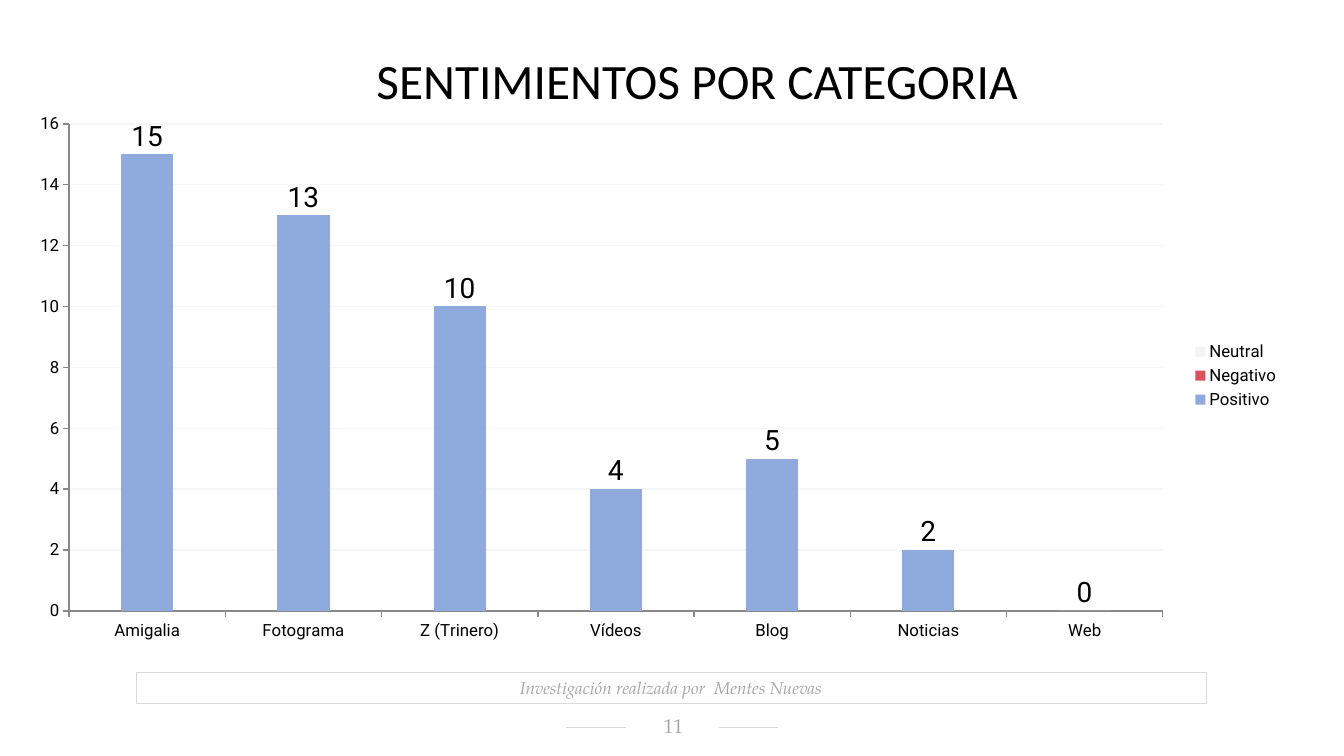
from dataclasses import dataclass

from lxml import etree
from pptx import Presentation
from pptx import util as u
from pptx.chart.data import CategoryChartData
from pptx.dml.color import RGBColor
from pptx.enum import chart as ch
from pptx.enum import shapes, text
from pptx.oxml.ns import qn

COLORS = {
    "black": "000000", "gray": "A6A6A6", "rule": "D9D9D9", "axis": "888888",
    "grid": "F4F6F8", "positive": "8FAADC", "negative": "D9525E", "neutral": "F4F4F4",
}
SERIF = "TeX Gyre Pagella"


@dataclass(frozen=True)
class Rule:
    left: float
    right: float
    y: float = 18.34


@dataclass(frozen=True)
class Sentiment:
    name: str
    values: tuple[int, ...]
    color: str


RULES = [Rule(14.27, 15.77), Rule(18.11, 19.61)]
CATEGORIES = ["Amigalia", "Fotograma", "Z (Trinero)", "Vídeos", "Blog", "Noticias", "Web"]
NO_MENTIONS = (0,) * len(CATEGORIES)
SENTIMENTS = [
    Sentiment("Positivo", (15, 13, 10, 4, 5, 2, 0), "positive"),
    Sentiment("Negativo", NO_MENTIONS, "negative"),
    Sentiment("Neutral", NO_MENTIONS, "neutral"),
]


def rgb(name: str) -> RGBColor:
    return RGBColor.from_string(COLORS[name])


def style_line(line, color: str, width: float) -> None:
    line.color.rgb = rgb(color)
    line.width = u.Pt(width)


def place(sp, left: float, top: float, width: float, height: float) -> None:
    sp.left, sp.top, sp.width, sp.height = map(u.Cm, (left, top, width, height))


def write(sp, content: str, *, size: float, font: str, color: str, italic: bool = False) -> None:
    tf = sp.text_frame
    tf.word_wrap = True
    tf.auto_size = text.MSO_AUTO_SIZE.NONE
    tf.vertical_anchor = text.MSO_ANCHOR.MIDDLE
    p = tf.paragraphs[0]
    p.alignment = text.PP_ALIGN.CENTER
    p.line_spacing = 1.0
    r = p.add_run()
    r.text = content
    r.font.size = u.Pt(size)
    r.font.name = font
    r.font.italic = italic
    r.font.color.rgb = rgb(color)


def draw_rule(slide, rule: Rule) -> None:
    line = slide.shapes.add_connector(
        shapes.MSO_CONNECTOR.STRAIGHT,
        u.Cm(rule.left), u.Cm(rule.y), u.Cm(rule.right), u.Cm(rule.y),
    )
    style_line(line.line, "rule", 0.5)
    etree.SubElement(line._element.spPr, qn("a:effectLst"))


def add_layout(parent, index: int, **settings: str | float) -> None:
    for old in parent.findall(qn("c:layout")):
        parent.remove(old)
    layout = etree.Element(qn("c:layout"))
    manual = etree.SubElement(layout, qn("c:manualLayout"))
    for tag, value in settings.items():
        etree.SubElement(manual, qn(f"c:{tag}")).set("val", str(value))
    parent.insert(index, layout)


def label_bars(series) -> None:
    for i in range(len(CATEGORIES)):
        label = series.points[i].data_label
        label.font.size = u.Pt(20)
        label.font.name = "Roboto"
        label.font.color.rgb = rgb("black")
        label.position = ch.XL_LABEL_POSITION.INSIDE_END
    for label in series._element.iter(qn("c:dLbl")):
        add_layout(label, 1, x=0, y=-0.07)


def draw_chart(slide) -> None:
    data = CategoryChartData(number_format="0")
    data.categories = CATEGORIES
    for sentiment in SENTIMENTS:
        data.add_series(sentiment.name, sentiment.values)
    chart = slide.shapes.add_chart(
        ch.XL_CHART_TYPE.COLUMN_STACKED,
        u.Cm(0.46), u.Cm(2.57), u.Cm(32.05), u.Cm(13.79), data,
    ).chart
    chart.has_title = False
    chart.font.size = u.Pt(12)
    chart.font.name = "Roboto"
    chart.font.color.rgb = rgb("black")
    chart.has_legend = True
    chart.legend.position = ch.XL_LEGEND_POSITION.RIGHT
    chart.legend.include_in_layout = False

    plot = chart.plots[0]
    plot.gap_width = 200
    plot.overlap = 100
    plot.vary_by_categories = False
    for series, sentiment in zip(plot.series, SENTIMENTS):
        series.format.fill.solid()
        series.format.fill.fore_color.rgb = rgb(sentiment.color)
    label_bars(plot.series[0])

    for axis in (chart.category_axis, chart.value_axis):
        axis.major_tick_mark = ch.XL_TICK_MARK.OUTSIDE
        axis.minor_tick_mark = ch.XL_TICK_MARK.NONE
        style_line(axis.format.line, "axis", 1)
    chart.category_axis.tick_label_position = ch.XL_TICK_LABEL_POSITION.LOW
    axis = chart.value_axis
    axis.minimum_scale, axis.maximum_scale, axis.major_unit = 0, 16, 2
    axis.tick_labels.number_format = "0"
    axis.tick_labels.number_format_is_linked = False
    axis.has_major_gridlines = True
    style_line(axis.major_gridlines.format.line, "grid", 1)
    add_layout(
        chart._chartSpace.chart.plotArea, 0, layoutTarget="inner",
        xMode="edge", yMode="edge", x=0.04, y=0.04, w=0.86, h=0.89,
    )


def main() -> None:
    prs = Presentation()
    prs.slide_width, prs.slide_height = u.Cm(33.87), u.Cm(19.05)
    slide = prs.slides.add_slide(prs.slide_layouts[5])
    for rule in RULES:
        draw_rule(slide, rule)

    title = slide.shapes.title
    place(title, 0, 1.12, 33.87, 1.78)
    write(title, "SENTIMIENTOS POR CATEGORIA", size=35.3, font="Calibri", color="black")
    title.text_frame.paragraphs[0]._p.get_or_add_pPr().set("marL", str(u.Cm(1.27)))

    number = slide.shapes.add_textbox(0, 0, 0, 0)
    place(number, 15.75, 18.03, 2.39, 0.58)
    write(number, "11", size=14.1, font=SERIF, color="gray")
    tf = number.text_frame
    tf.margin_left, tf.margin_top = u.Cm(0.3), u.Cm(0.05)
    tf.margin_right, tf.margin_bottom = u.Cm(0.25), u.Cm(0.13)

    credit = slide.shapes.add_shape(shapes.MSO_SHAPE.RECTANGLE, 0, 0, 0, 0)
    place(credit, 3.43, 16.94, 26.97, 0.79)
    credit.shadow.inherit = False
    credit.fill.background()
    style_line(credit.line, "rule", 0.75)
    write(credit, "Investigación realizada por  Mentes Nuevas",
          size=12.3, font=SERIF, color="gray", italic=True)

    draw_chart(slide)
    prs.save("out.pptx")


if __name__ == "__main__":
    main()
